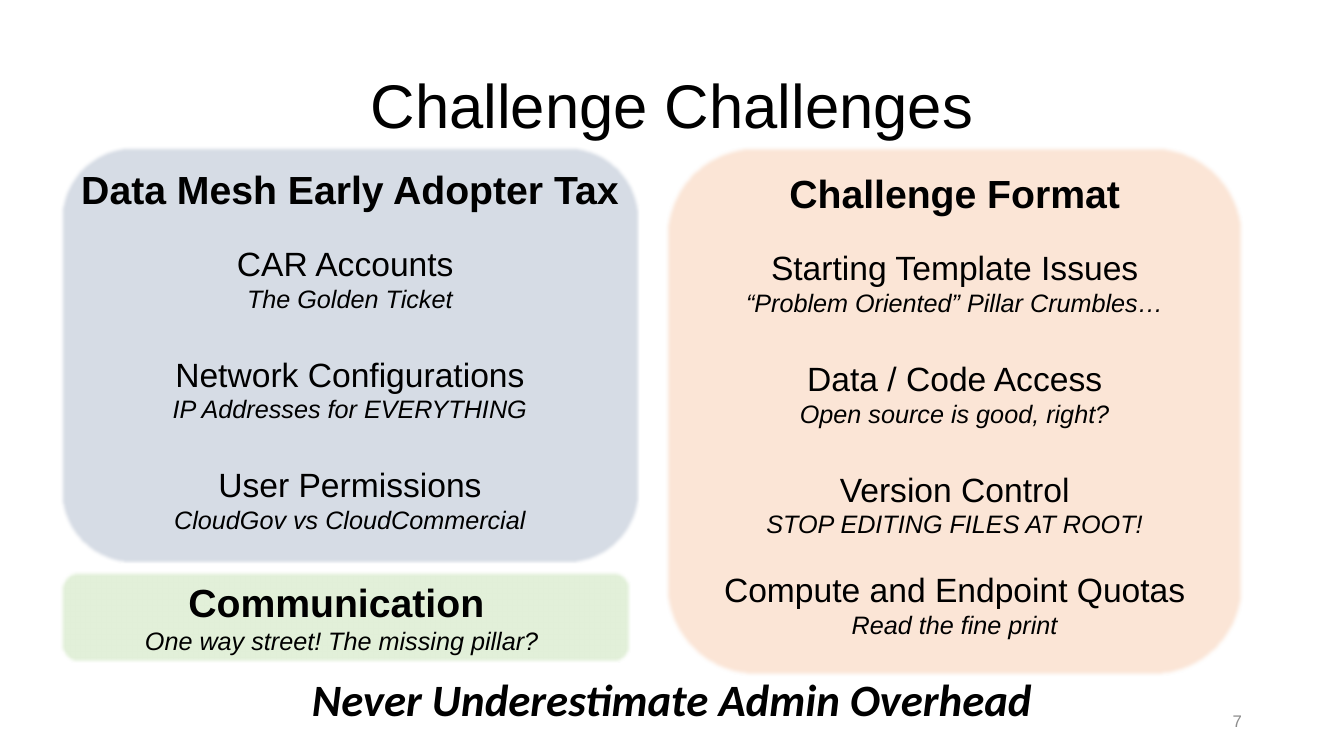
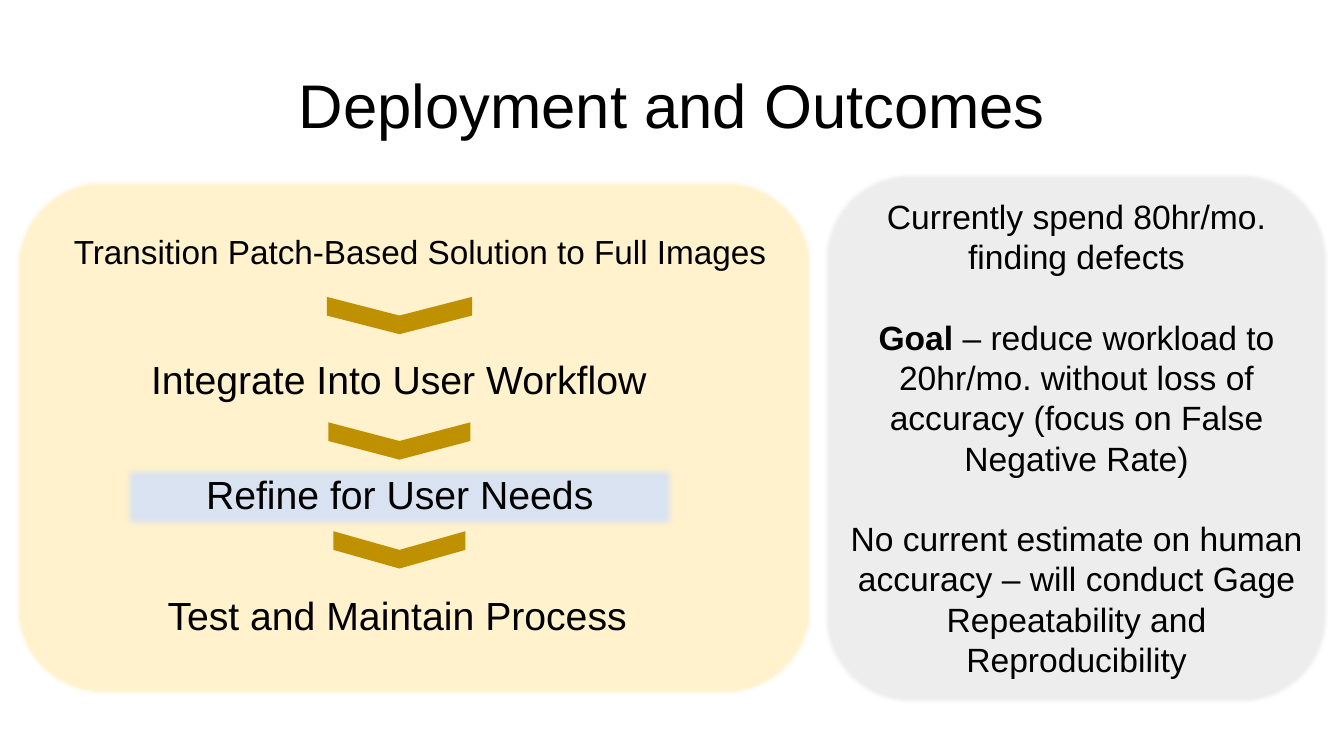
"""Build two slides on the challenges and the outcomes of a data project."""
import dataclasses
import typing

import pptx
import pptx.dml.color
import pptx.enum.shapes
import pptx.enum.text
import pptx.oxml
import pptx.oxml.ns
import pptx.util

Pt = pptx.util.Pt
Shape = pptx.enum.shapes.MSO_SHAPE
Align = pptx.enum.text.PP_ALIGN
Anchor = pptx.enum.text.MSO_ANCHOR


@dataclasses.dataclass(frozen=True)
class Theme:
    """Colours, fonts, type sizes and lengths shared by the slides."""

    ink: str = "000000"
    page_number: str = "8C8C8C"
    blue: str = "D6DCE5"
    orange: str = "FBE5D6"
    green: str = "E2F0D9"
    yellow: str = "FFF2CC"
    grey: str = "EDEDED"
    highlight: str = "DAE3F3"
    arrow: str = "BF9000"
    font: str = "Arial"
    closing_font: str = "Calibri"
    title: float = 44
    closing: float = 32
    heading: float = 28
    body: float = 24
    long_step: float = 23.8
    detail: float = 18
    number: float = 12
    small_gap: float = 21.6
    large_gap: float = 28.8
    panel_edge: float = 2.5
    highlight_edge: float = 5


THEME = Theme()


class Span(typing.NamedTuple):
    """A run of text with its own style."""

    text: str
    size: float = THEME.body
    bold: bool = False
    italic: bool = False
    color: str = THEME.ink
    font: str = THEME.font


class Para(typing.NamedTuple):
    """A paragraph made of spans, with the gap above it."""

    spans: list
    gap: float = 0


def rgb(color):
    """Return a colour object for a hex value."""
    return pptx.dml.color.RGBColor.from_string(color)


def write(shape, paras, align=Align.CENTER, anchor=Anchor.TOP, spacing=None):
    """Fill the text frame of a shape, run by run."""
    frame = shape.text_frame
    frame.word_wrap = True
    frame.auto_size = pptx.enum.text.MSO_AUTO_SIZE.NONE
    frame.vertical_anchor = anchor
    for index, para in enumerate(paras):
        target = frame.add_paragraph() if index else frame.paragraphs[0]
        target.alignment = align
        target.space_before = Pt(para.gap)
        if spacing:
            target.line_spacing = spacing
        for span in para.spans:
            run = target.add_run()
            run.text = span.text
            font = run.font
            font.name, font.size = span.font, Pt(span.size)
            font.bold, font.italic = span.bold, span.italic
            font.color.rgb = rgb(span.color)


def add_page(deck, title):
    """Add a title-only slide with its title placed and styled."""
    page = deck.slides.add_slide(deck.slide_layouts[5])
    box = page.shapes.title
    box.left, box.top, box.width, box.height = map(Pt, (137.5, 25.2, 685.4, 104.4))
    write(box, [Para([Span(title, THEME.title)])], anchor=Anchor.MIDDLE, spacing=0.9)
    return page


def add_text(page, area, paras, **style):
    """Add a wrapped text box."""
    write(page.shapes.add_textbox(*map(Pt, area)), paras, **style)


def add_shape(page, kind, area, color):
    """Add a flat filled shape."""
    shape = page.shapes.add_shape(kind, *map(Pt, area))
    shape.shadow.inherit = False
    shape.fill.solid()
    shape.fill.fore_color.rgb = rgb(color)
    shape.line.fill.background()
    return shape


def soften(shape, radius):
    """Give a shape a soft edge."""
    effects = shape._element.spPr.find(pptx.oxml.ns.qn("a:effectLst"))
    namespace = pptx.oxml.ns.nsdecls("a")
    effects.append(pptx.oxml.parse_xml(f'<a:softEdge {namespace} rad="{Pt(radius)}"/>'))


def add_panel(page, area, color):
    """Add a rounded panel with a soft edge."""
    soften(add_shape(page, Shape.ROUNDED_RECTANGLE, area, color), THEME.panel_edge)


def add_down_arrow(page, center_x, center_y, span):
    """Add a chevron that points down, placed by its centre."""
    depth = 26.64
    area = (center_x - depth / 2, center_y - span / 2, depth, span)
    add_shape(page, Shape.CHEVRON, area, THEME.arrow).rotation = 90


def topic_list(heading, topics):
    """Return a heading followed by topics, each with a detail line."""
    paras = [Para([Span(heading, THEME.heading, bold=True)])]
    for topic, detail, gap in topics:
        paras.append(Para([Span(topic)], gap))
        paras.append(Para([Span(detail, THEME.detail, italic=True)]))
    return paras


def add_challenges(deck):
    """Add the slide about the challenges."""
    small, large = THEME.small_gap, THEME.large_gap
    page = add_page(deck, "Challenge Challenges")
    number = Span("7", THEME.number, color=THEME.page_number)
    add_text(page, (678.2, 500.4, 216, 28.8), [Para([number])],
             align=Align.RIGHT, anchor=Anchor.MIDDLE)

    add_panel(page, (43.2, 104.4, 413.3, 298.1), THEME.blue)
    add_text(page, (49, 114.5, 401.8, 283.7), topic_list("Data Mesh Early Adopter Tax", [
        ("CAR Accounts ", "The Golden Ticket", small),
        ("Network Configurations", "IP Addresses for EVERYTHING", large),
        ("User Permissions", "CloudGov vs CloudCommercial", large),
    ]))

    add_panel(page, (475.2, 104.4, 413.3, 378.7), THEME.orange)
    add_text(page, (481, 117.4, 401.8, 346.3), topic_list("Challenge Format", [
        ("Starting Template Issues", "“Problem Oriented” Pillar Crumbles…", small),
        ("Data / Code Access", "Open source is good, right?", large),
        ("Version Control", "STOP EDITING FILES AT ROOT!", large),
        ("Compute and Endpoint Quotas", "Read the fine print", small),
    ]))

    add_panel(page, (43.2, 408.2, 407.5, 64.8), THEME.green)
    add_text(page, (43.2, 409.7, 401.8, 63.4), [
        Para([Span("Communication ", THEME.heading, bold=True)]),
        Para([Span("One way street! The missing pillar?", THEME.detail, italic=True)]),
    ])
    closing = Span("Never Underestimate Admin Overhead", THEME.closing,
                   bold=True, italic=True, font=THEME.closing_font)
    add_text(page, (144, 476.6, 672.5, 46.1), [Para([closing])])


def add_outcomes(deck):
    """Add the slide about deployment and outcomes."""
    page = add_page(deck, "Deployment and Outcomes")
    add_panel(page, (11.5, 129.6, 568.1, 366.5), THEME.yellow)
    step_height = 47.5
    for text, left, top, width, size, spacing in [
        ("Transition Patch-Based Solution to Full Images",
         25.9, 158.4, 547.9, THEME.long_step, 0.8),
        ("Integrate Into User Workflow", 74.9, 249.1, 419.8, THEME.heading, 0.9),
        ("Test and Maintain Process", 108.7, 417.6, 349.9, THEME.heading, 0.9),
    ]:
        add_text(page, (left, top, width, step_height), [Para([Span(text, size)])],
                 anchor=Anchor.MIDDLE, spacing=spacing)

    area = (87.1, 331.2, 396.7, step_height)
    highlight = add_shape(page, Shape.RECTANGLE, area, THEME.highlight)
    soften(highlight, THEME.highlight_edge)
    write(highlight, [Para([Span("Refine for User Needs", THEME.heading)])],
          anchor=Anchor.MIDDLE, spacing=0.9)

    for center_y, span in [(225.4, 103.7), (315, 101.5), (392.8, 94.3)]:
        add_down_arrow(page, 285.3, center_y, span)

    add_panel(page, (589, 123.8, 360, 378.7), THEME.grey)
    add_text(page, (594, 136.1, 349.9, 356.4), [
        Para([Span("Currently spend 80hr/mo. finding defects")]),
        Para([
            Span("Goal", bold=True),
            Span(" – reduce workload to 20hr/mo. without loss of accuracy "
                 "(focus on False Negative Rate)"),
        ], THEME.large_gap),
        Para([Span("No current estimate on human accuracy – will conduct Gage "
                   "Repeatability and Reproducibility")], THEME.large_gap),
    ])


def main():
    """Build and save the deck."""
    deck = pptx.Presentation()
    deck.slide_width, deck.slide_height = Pt(960), Pt(540)
    add_challenges(deck)
    add_outcomes(deck)
    deck.save("out.pptx")


if __name__ == "__main__":
    main()
